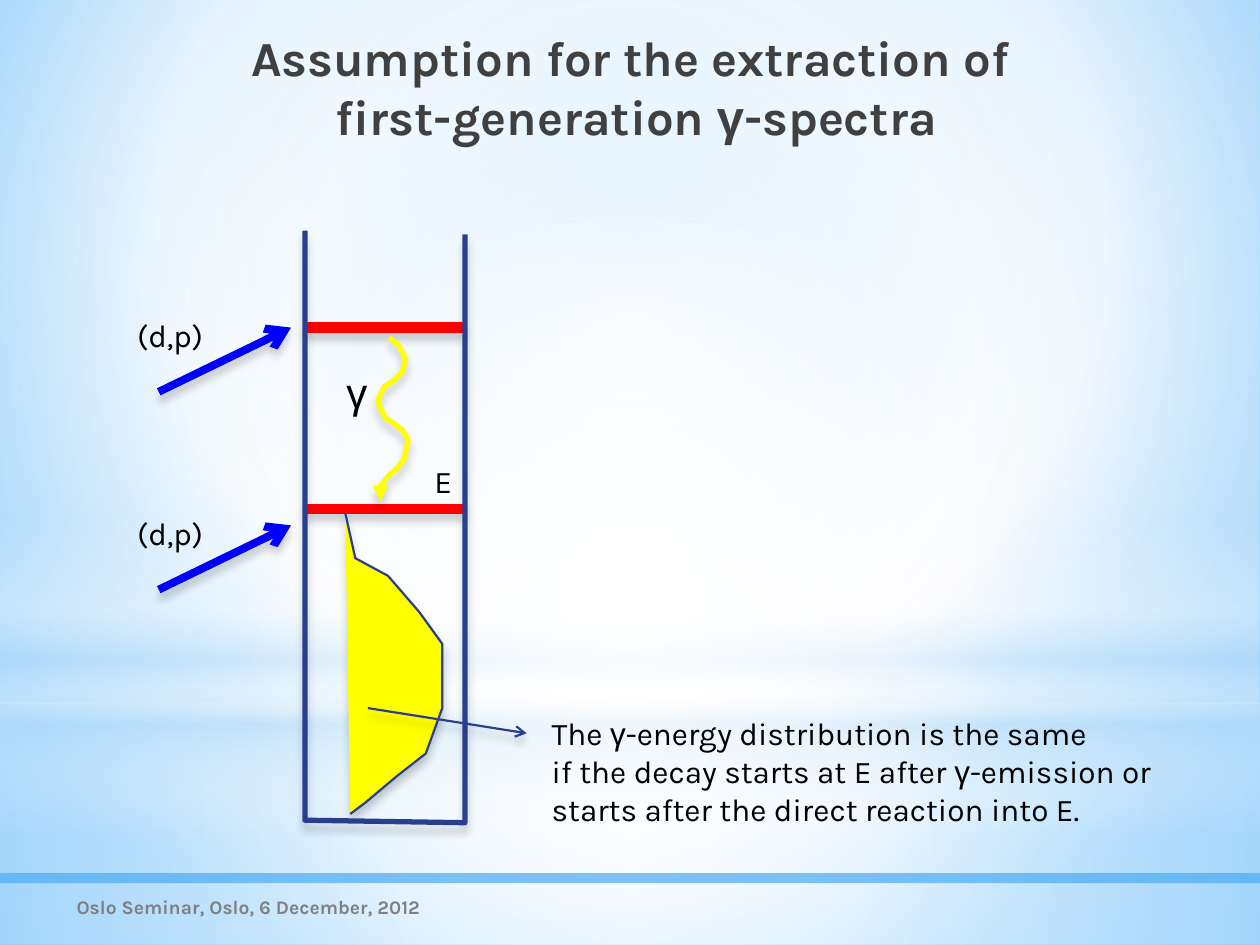
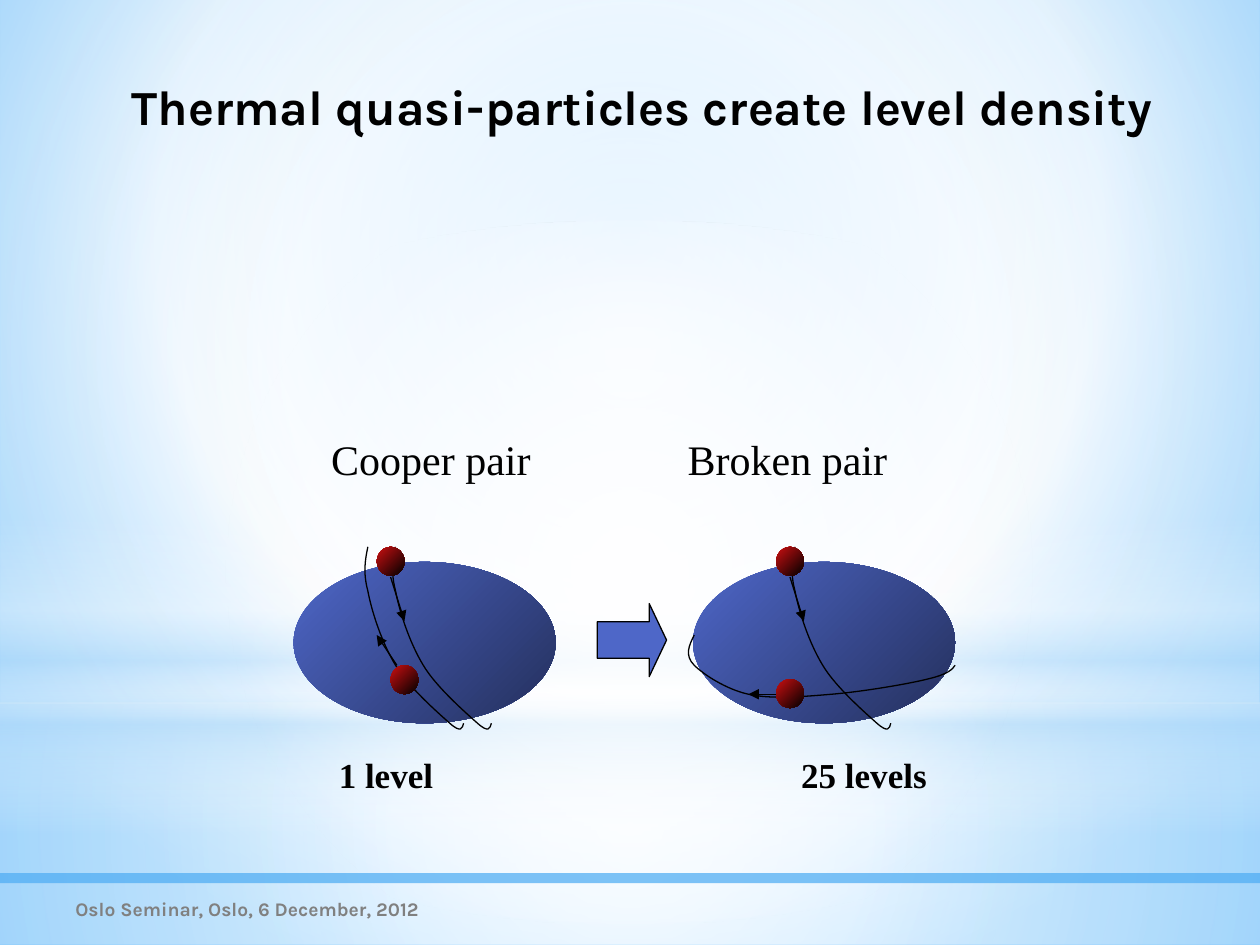
from typing import NamedTuple, Optional, Union

from lxml.etree import SubElement
from pptx import Presentation
from pptx.dml.color import RGBColor
from pptx.enum.shapes import MSO_CONNECTOR, MSO_SHAPE
from pptx.enum.text import MSO_ANCHOR, MSO_AUTO_SIZE, PP_ALIGN
from pptx.oxml.ns import qn
from pptx.oxml.xmlchemy import OxmlElement
from pptx.shapes.group import GroupShape
from pptx.slide import Slide
from pptx.util import Inches, Pt

BLACK = RGBColor(0x00, 0x00, 0x00)
WHITE = RGBColor(0xFF, 0xFF, 0xFF)
DARK = RGBColor(0x40, 0x40, 0x40)
GRAY = RGBColor(0x80, 0x80, 0x80)
SKY = RGBColor(0x9E, 0xD5, 0xFF)
AZURE = RGBColor(0x5B, 0xB9, 0xFF)
PALE = RGBColor(0xB4, 0xDC, 0xFA)
BAR = RGBColor(0x4F, 0xAD, 0xF3)
RED = RGBColor(0xFF, 0x00, 0x00)
BLUE = RGBColor(0x00, 0x00, 0xFF)
YELLOW = RGBColor(0xFF, 0xFF, 0x00)
NAVY = RGBColor(0x2A, 0x3E, 0x8E)
CORE = RGBColor(0x4E, 0x67, 0xC8)
CORE_DARK = RGBColor(0x24, 0x2F, 0x5C)
CRIMSON = RGBColor(0xCC, 0x0F, 0x11)

KARLA, ARIAL, TIMES = "Karla", "Arial", "Times New Roman"
FOOTER = "Oslo Seminar, Oslo, 6 December, 2012"
SHIFT = 3.17  # from the Cooper pair to the broken pair

Point = tuple[float, float]
Canvas = Union[Slide, GroupShape]


class Box(NamedTuple):
    left: float
    top: float
    width: float
    height: float

    def inches(self) -> list:
        return [Inches(v) for v in self]


class Stop(NamedTuple):
    place: int
    color: RGBColor
    alpha: int = 100


class Grad(NamedTuple):
    """Radial around the rectangle in focus, or linear when an angle is set."""
    stops: list[Stop]
    angle: Optional[int] = None
    focus: tuple = (50, 50, 50, 50)


class Pen(NamedTuple):
    color: RGBColor
    width: float
    head: Optional[str] = None
    shadow: bool = True


class Style(NamedTuple):
    size: int
    font: str = KARLA
    color: RGBColor = BLACK
    bold: bool = False


class Band(NamedTuple):
    kind: MSO_SHAPE
    box: Box
    grad: Grad


BACK = Grad([Stop(0, SKY), Stop(60, WHITE), Stop(100, AZURE)], focus=(20, 10, 20, 60))
BANDS = [
    Band(MSO_SHAPE.RECTANGLE, Box(0, 5.58, 10, 1.92),
         Grad([Stop(0, WHITE, 91), Stop(37, WHITE, 76), Stop(100, PALE, 79)])),
    Band(MSO_SHAPE.RECTANGLE, Box(0, 0, 10, 5.58),
         Grad([Stop(0, WHITE, 89), Stop(48, WHITE, 62), Stop(100, PALE, 79)])),
    Band(MSO_SHAPE.RECTANGLE, Box(0, 4.12, 10, 2.5),
         Grad([Stop(0, WHITE, 0), Stop(29, WHITE, 30), Stop(45, PALE, 40),
               Stop(55, WHITE, 26), Stop(65, PALE, 60), Stop(100, WHITE, 0)], 90)),
    Band(MSO_SHAPE.OVAL, Box(0, 1.75, 10, 5.58),
         Grad([Stop(0, WHITE), Stop(56, WHITE, 0)])),
]
CORE_GRAD = Grad([Stop(0, CORE), Stop(100, CORE_DARK)], 45)
BALL_GRAD = Grad([Stop(0, CRIMSON), Stop(100, BLACK)], 45)

BODY = Style(18)
LABEL = Style(24, TIMES)
COUNT = Style(20, TIMES, bold=True)
NOTE = Style(11, color=GRAY, bold=True)

LEVEL = Pen(RED, 6)
BEAM = Pen(BLUE, 4.5, "arrow")
THIN = Pen(BLACK, 0.75, shadow=False)
PATH = THIN._replace(head="triangle")

WELL = [(2.42, 1.83), (2.42, 6.51), (3.69, 6.53), (3.69, 1.86)]
DECAY = [(2.74, 4.07), (2.82, 4.43), (3.08, 4.57), (3.33, 4.86), (3.51, 5.11),
         (3.51, 5.37), (3.51, 5.62), (3.38, 5.98), (3.15, 6.16), (2.9, 6.37),
         (2.78, 6.46)]
WAVE = [(3.09, 2.68), (3.17, 2.75), (3.22, 2.85), (3.19, 2.96), (3.11, 3.03),
        (3.05, 3.07), (3.01, 3.15), (3, 3.2), (3.06, 3.32), (3.11, 3.35),
        (3.19, 3.41), (3.24, 3.49), (3.21, 3.64), (3.15, 3.72), (3.08, 3.78),
        (3.01, 3.87), (3.02, 3.98)]
ORBIT = [(2.92, 4.34), (2.9, 4.44), (2.88, 4.54), (2.92, 4.69), (2.95, 4.85),
         (3.03, 5.1), (3.14, 5.28), (3.24, 5.45), (3.48, 5.66), (3.57, 5.74),
         (3.66, 5.82), (3.67, 5.78), (3.68, 5.74)]
WIDE = [(5.51, 5.04), (5.47, 5.12), (5.43, 5.2), (5.51, 5.28), (5.58, 5.35),
        (5.76, 5.47), (5.94, 5.51), (6.12, 5.55), (6.36, 5.53), (6.6, 5.51),
        (6.84, 5.49), (7.2, 5.43), (7.36, 5.39), (7.53, 5.35), (7.56, 5.31),
        (7.58, 5.28)]


def add_color(parent, color: RGBColor, alpha: int) -> None:
    node = SubElement(parent, qn("a:srgbClr"), val=str(color))
    if alpha < 100:
        SubElement(node, qn("a:alpha"), val=str(alpha * 1000))


def blend(props, grad: Grad) -> None:
    """Swap the solid fill of a property element for a gradient."""
    node = OxmlElement("a:gradFill")
    node.set("rotWithShape", "1")
    stops = SubElement(node, qn("a:gsLst"))
    for stop in grad.stops:
        add_color(SubElement(stops, qn("a:gs"), pos=str(stop.place * 1000)),
                  stop.color, stop.alpha)
    if grad.angle is None:
        way = SubElement(node, qn("a:path"), path="circle")
        sides = {k: str(v * 1000) for k, v in zip("ltrb", grad.focus)}
        SubElement(way, qn("a:fillToRect"), **sides)
    else:
        SubElement(node, qn("a:lin"), ang=str(grad.angle * 60000), scaled="0")
    props.replace(props.find(qn("a:solidFill")), node)


def add_shape(page: Canvas, kind: MSO_SHAPE, box: Box, color: RGBColor = WHITE,
              grad: Optional[Grad] = None):
    shape = page.shapes.add_shape(kind, *box.inches())
    shape.shadow.inherit = False
    shape.line.fill.background()
    shape.fill.solid()
    shape.fill.fore_color.rgb = color
    if grad:
        blend(shape.element.spPr, grad)
    return shape


def ink(shape, pen: Pen) -> None:
    """Set line, arrowhead and shadow."""
    shape.line.color.rgb = pen.color
    shape.line.width = Pt(pen.width)
    props = shape.element.spPr
    if pen.head:
        SubElement(props.find(qn("a:ln")), qn("a:tailEnd"), type=pen.head)
    effects = SubElement(props, qn("a:effectLst"))
    if pen.shadow:
        shade = SubElement(effects, qn("a:outerShdw"), blurRad=str(Pt(5)),
                           dist=str(Pt(4)), dir="5400000", rotWithShape="0")
        add_color(shade, BLACK, 20)


def add_line(page: Canvas, start: Point, end: Point, pen: Pen) -> None:
    ends = [Inches(v) for v in (*start, *end)]
    ink(page.shapes.add_connector(MSO_CONNECTOR.STRAIGHT, *ends), pen)


def trace(page: Canvas, points: list[Point], pen: Pen, fill: Optional[RGBColor] = None):
    """Draw an open outline through the points."""
    first, *rest = [(Inches(x), Inches(y)) for x, y in points]
    form = page.shapes.build_freeform(*first)
    form.add_line_segments(rest, close=False)
    shape = form.convert_to_shape()
    if fill is None:
        shape.fill.background()
    else:
        shape.fill.solid()
        shape.fill.fore_color.rgb = fill
    ink(shape, pen)
    return shape


def add_curve(page: Canvas, knots: list[Point], step: float = 0) -> None:
    """Draw a chain of cubic Bezier pieces, moved right by step."""
    shape = trace(page, [(x + step, y) for x, y in knots], THIN)
    way = shape.element.find(".//" + qn("a:path"))
    for i, line in enumerate(way.findall(qn("a:lnTo"))):
        if i % 3 == 0:
            bend = SubElement(way, qn("a:cubicBezTo"))
        bend.append(line[0])
        way.remove(line)


def write(para, text: str, style: Style) -> None:
    """Add the text in runs, with each γ in Arial."""
    for part in text.replace("γ", "|γ|").split("|"):
        if part:
            run = para.add_run()
            run.text = part
            run.font.name = ARIAL if part == "γ" else style.font
            run.font.size = Pt(style.size)
            run.font.bold = style.bold
            run.font.color.rgb = style.color


def add_text(page: Canvas, box: Box, lines: list[str], style: Style):
    shape = page.shapes.add_textbox(*box.inches())
    frame = shape.text_frame
    frame.word_wrap = True
    for i, line in enumerate(lines):
        write(frame.add_paragraph() if i else frame.paragraphs[0], line, style)
    return shape


def add_pair(page: Canvas, box: Box, names: tuple[str, str], tab: float, style: Style) -> None:
    """Write two names on one line, the second at the tab stop."""
    shape = add_text(page, box, ["\t".join(names)], style)
    props = shape.element.find(".//" + qn("a:p")).get_or_add_pPr()
    SubElement(SubElement(props, qn("a:tabLst")), qn("a:tab"),
               pos=str(Inches(tab)), algn="l")


def add_title(slide: Slide, box: Box, lines: list[str], color: RGBColor) -> None:
    title = slide.shapes.title
    title.left, title.top, title.width, title.height = box.inches()
    frame = title.text_frame
    frame.word_wrap = True
    frame.auto_size = MSO_AUTO_SIZE.NONE
    frame.vertical_anchor = MSO_ANCHOR.TOP
    para = frame.paragraphs[0]
    para.alignment = PP_ALIGN.CENTER
    title.element.find(".//" + qn("a:pPr")).set("marL", str(Inches(0.05)))
    for i, line in enumerate(lines):
        if i:
            para.add_line_break()
        write(para, line, Style(28, color=color, bold=True))


def add_slide(deck, left: float, top: float) -> Slide:
    """Add a slide with the bar, and the footer at the given place."""
    slide = deck.slides.add_slide(deck.slide_layouts[5])
    bar = add_shape(slide, MSO_SHAPE.RECTANGLE, Box(0, 6.93, 10, 0.08), BAR)
    tint = bar.element.spPr.find(qn("a:solidFill"))[0]
    SubElement(tint, qn("a:alpha"), val="73000")
    note = add_text(slide, Box(left, top, 3.67, 0.4), [FOOTER], NOTE)
    note.text_frame.vertical_anchor = MSO_ANCHOR.MIDDLE
    return slide


def set_master(deck, slide: Slide) -> None:
    """Paint the master, moving the bands to it from the slide."""
    master = deck.slide_master
    master.background.fill.solid()
    blend(master.element.find(".//" + qn("p:bgPr")), BACK)
    for i, band in enumerate(BANDS):
        shape = add_shape(slide, band.kind, band.box, grad=band.grad)
        master.shapes.element.insert(2 + i, shape.element)


def draw_decay(slide: Slide) -> None:
    add_title(slide, Box(1.14, 0.17, 7.77, 1.06),
              ["Assumption for the extraction of ", "first-generation γ-spectra"], DARK)
    for y in (2.6, 4.04):
        add_line(slide, (2.42, y), (3.69, y), LEVEL)
    trace(slide, DECAY, Pen(NAVY, 1.25), YELLOW)
    for y in (2.46, 4.03):
        beam = slide.shapes.add_group_shape()
        add_line(beam, (1.26, y + 0.65), (2.31, y + 0.14), BEAM)
        add_text(beam, Box(0.99, y, 0.76, 0.4), ["(d,p)"], BODY)
    trace(slide, WAVE, Pen(YELLOW, 3, "triangle"))
    add_text(slide, Box(4.28, 5.62, 5.05, 1.01),
             ["The γ-energy distribution is the same",
              "if the decay starts at E after γ-emission or",
              "starts after the direct reaction into E."], BODY)
    add_text(slide, Box(3.35, 3.62, 0.34, 0.4), ["E"], BODY)
    trace(slide, WELL, Pen(NAVY, 3))
    add_text(slide, Box(2.65, 2.86, 0.46, 0.5), ["γ"], Style(24))
    add_line(slide, (2.92, 5.62), (4.18, 5.82), Pen(NAVY, 1.25, "arrow"))


def add_ball(page: Canvas, left: float, top: float) -> None:
    add_shape(page, MSO_SHAPE.OVAL, Box(left, top, 0.22, 0.23), grad=BALL_GRAD)


def add_core(page: Canvas, step: float) -> None:
    """Draw a nucleus with the particle that both pairs have."""
    add_shape(page, MSO_SHAPE.OVAL, Box(2.33 + step, 4.46, 2.08, 1.28), grad=CORE_GRAD)
    add_curve(page, ORBIT, 0.22 + step)
    add_ball(page, 2.99 + step, 4.34)
    add_line(page, (3.1 + step, 4.58), (3.21 + step, 4.93), PATH)


def draw_pairs(slide: Slide) -> None:
    add_title(slide, Box(0.6, 0.56, 8.94, 1.06),
              ["Thermal quasi-particles create level density"], BLACK)
    group = slide.shapes.add_group_shape()
    add_pair(group, Box(2.53, 3.39, 4.62, 0.5), ("Cooper pair", "Broken pair"), 2.83, LABEL)
    add_pair(group, Box(2.59, 5.93, 4.91, 0.44), ("1 level", "25 levels"), 3.67, COUNT)
    add_core(group, 0)
    add_curve(group, ORBIT)
    add_ball(group, 3.1, 5.28)
    add_line(group, (3.15, 5.28), (2.99, 5.04), PATH)
    add_core(group, SHIFT)
    add_line(group, (6.22, 5.51), (5.94, 5.51), PATH)
    add_curve(group, WIDE)
    add_ball(group, 6.16, 5.39)
    arrow = add_shape(group, MSO_SHAPE.RIGHT_ARROW, Box(4.74, 4.79, 0.55, 0.58), CORE)
    arrow.adjustments[0], arrow.adjustments[1] = 0.5, 0.25
    arrow.line.color.rgb = BLACK
    arrow.line.width = Pt(0.75)


def main() -> None:
    deck = Presentation()
    deck.slide_width, deck.slide_height = Inches(10), Inches(7.5)
    first = add_slide(deck, 0.51, 7)
    set_master(deck, first)
    draw_decay(first)
    draw_pairs(add_slide(deck, 0.5, 7.01))
    deck.save("out.pptx")


if __name__ == "__main__":
    main()
